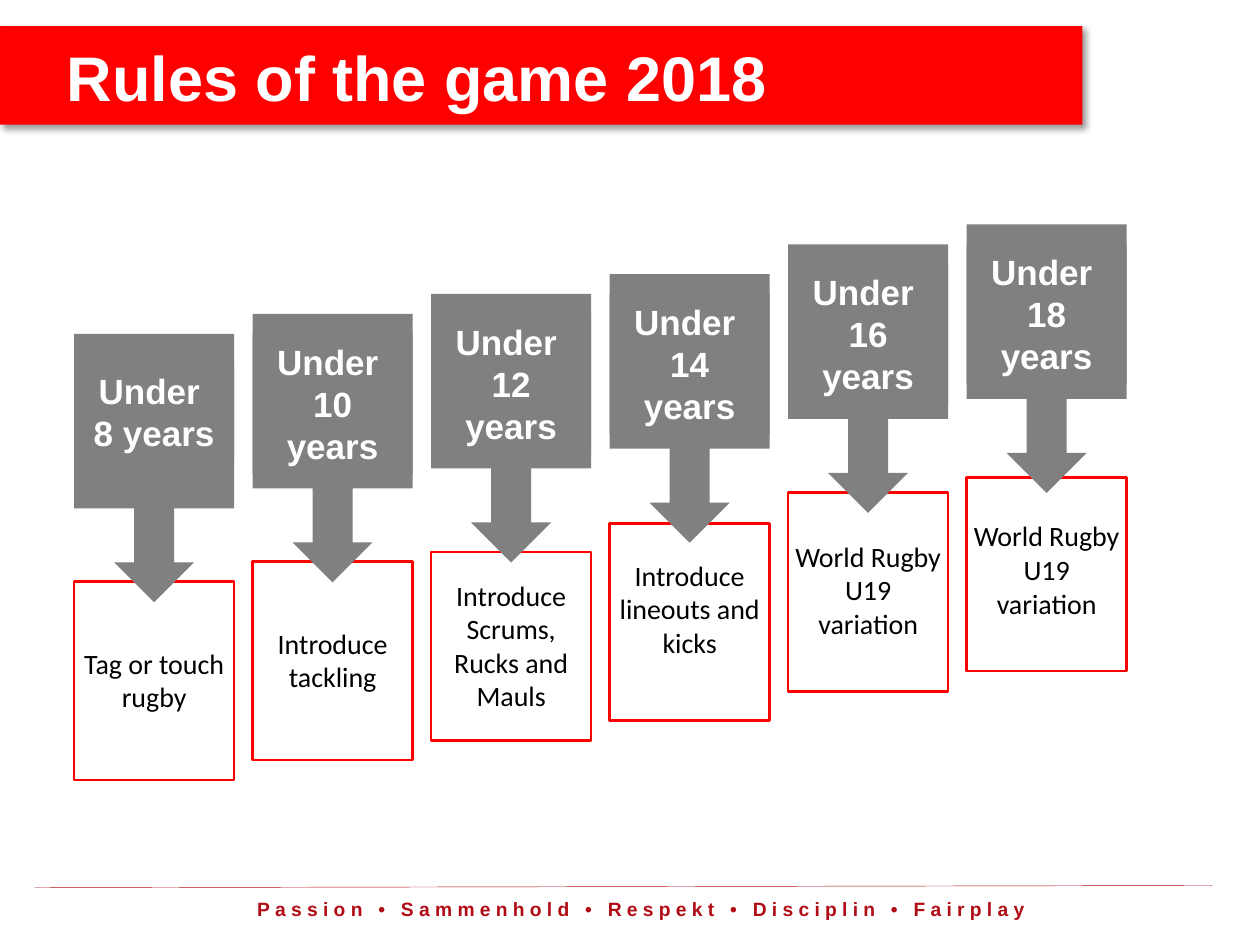
from dataclasses import dataclass

from lxml.etree import SubElement
from pptx import Presentation
from pptx.dml.color import RGBColor
from pptx.enum.shapes import MSO_CONNECTOR, MSO_SHAPE
from pptx.enum.text import MSO_ANCHOR, PP_ALIGN
from pptx.oxml import parse_xml
from pptx.oxml.ns import qn
from pptx.util import Pt

SHADE = (
    '<a:effectLst xmlns:a="http://schemas.openxmlformats.org/drawingml/2006/main">'
    '<a:outerShdw blurRad="50800" dist="38100" dir="2700000" algn="tl" rotWithShape="0">'
    '<a:srgbClr val="000000"><a:alpha val="40000"/></a:srgbClr>'
    '</a:outerShdw></a:effectLst>'
)


@dataclass(frozen=True)
class Theme:
    """Colours, fonts and type sizes of the slide."""
    red: str = "FF0000"
    wine: str = "B10C15"
    grey: str = "808080"
    white: str = "FFFFFF"
    black: str = "000000"
    head: str = "Arial"
    body: str = "Calibri"
    title: int = 36
    label: int = 20
    note: int = 16
    foot: int = 11


class Deck:
    """Draws each kind of element on the current slide."""

    def __init__(self, theme, slide):
        """Keep the style and the slide."""
        self.theme = theme
        self.slide = slide

    def letter(self, frame, text, size, face, tint, bold=True, align=PP_ALIGN.CENTER):
        """Fill a text frame and format its runs."""
        frame.word_wrap = True
        frame.text = text
        for line in frame.paragraphs:
            line.alignment = align
            for run in line.runs:
                run.font.size = Pt(size)
                run.font.name = face
                run.font.bold = bold
                run.font.color.rgb = RGBColor.from_string(tint)

    def block(self, kind, place, fill=None, line=None, home=None):
        """Add a preset shape to the slide or to a group."""
        shape = (home or self.slide).shapes.add_shape(kind, *map(Pt, place))
        shape.shadow.inherit = False
        if fill:
            shape.fill.solid()
            shape.fill.fore_color.rgb = RGBColor.from_string(fill)
        else:
            shape.fill.background()
        if line:
            shape.line.color.rgb = RGBColor.from_string(line)
            shape.line.width = Pt(1.5)
        else:
            shape.line.fill.background()
        return shape

    def banner(self, place):
        """Add the red title bar with its soft shadow."""
        bar = self.block(MSO_SHAPE.RECTANGLE, place, self.theme.red)
        props = bar.element.spPr
        props.replace(props.find(qn("a:effectLst")), parse_xml(SHADE))

    def title(self, text, place):
        """Place the title in front of the shapes drawn so far."""
        title = self.slide.shapes.title
        title.left, title.top, title.width, title.height = map(Pt, place)
        title.element.getparent().append(title.element)
        theme = self.theme
        title.text_frame.vertical_anchor = MSO_ANCHOR.MIDDLE
        self.letter(title.text_frame, text, theme.title, theme.head, theme.white,
                    align=PP_ALIGN.LEFT)

    def foot(self, text, place):
        """Add the spaced motto line."""
        theme = self.theme
        box = self.slide.shapes.add_textbox(*map(Pt, place))
        self.letter(box.text_frame, text, theme.foot, theme.head, theme.wine)
        for props in box.element.iter(qn("a:rPr")):
            props.set("spc", "300")

    def rule(self, ends):
        """Add the thin line above the motto."""
        line = self.slide.shapes.add_connector(MSO_CONNECTOR.STRAIGHT, *map(Pt, ends))
        line.line.color.rgb = RGBColor.from_string(self.theme.wine)
        line.line.width = Pt(0.25)
        SubElement(line.element.spPr, qn("a:effectLst"))

    def arrow(self, text, left, top, width, drop, tall):
        """Add a grouped arrow callout with its label."""
        theme = self.theme
        group = self.slide.shapes.add_group_shape()
        self.block(MSO_SHAPE.DOWN_ARROW_CALLOUT, (left, top, width, 153.4),
                   theme.grey, home=group)
        label = self.block(MSO_SHAPE.RECTANGLE, (left, top + drop, width, tall),
                           theme.grey, home=group)
        label.text_frame.vertical_anchor = MSO_ANCHOR.TOP
        self.letter(label.text_frame, text, theme.label, theme.head, theme.white)

    def note(self, text, place):
        """Add the text of a step."""
        theme = self.theme
        box = self.slide.shapes.add_textbox(*map(Pt, place))
        self.letter(box.text_frame, text, theme.note, theme.body, theme.black, False)


def main():
    """Build and save the slide."""
    show = Presentation()
    show.slide_width, show.slide_height = Pt(720), Pt(540)
    theme = Theme()
    deck = Deck(theme, show.slides.add_slide(show.slide_layouts[5]))

    wide, start, pitch = 91.4, 42.4, 102
    last = "World Rugby\nU19\nvariation"
    steps = [
        (8, 190.8, 332.4, 113.4, 365.8, 46, "Tag or touch rugby"),
        (10, 179.4, 321, 113.4, 354.2, 46, "Introduce tackling"),
        (12, 168, 315.4, 107.8, 326.9, 85, "Introduce\nScrums, Rucks and Mauls"),
        (14, 156.7, 299, 112.8, 315.4, 65.5, "Introduce lineouts and kicks"),
        (16, 139.7, 281.4, 113.8, 304.6, 65.5, last),
        (18, 128.3, 272.9, 110.5, 293, 65.5, last),
    ]
    lefts = [start + pitch * i for i in range(len(steps))]

    deck.foot("Passion • Sammenhold • Respekt • Disciplin • Fairplay",
              (121, 509, 491, 33.8))
    deck.rule((19.7, 507.3, 692.6, 506))
    deck.banner((0, 15, 618.5, 56.2))
    for left, (_, _, top, tall, *_) in zip(lefts, steps):
        deck.block(MSO_SHAPE.RECTANGLE, (left, top, wide, tall), line=theme.red)
    deck.title("Rules of the game 2018", (31, 15.8, 587.5, 56.2))
    for left, (age, top, *_) in zip(lefts, steps):
        drop, tall = (16.6, 55.4) if age < 10 else (11.4, 80)
        deck.arrow(f"Under \n{age} years", left, top, wide, drop, tall)
    for left, (*_, top, tall, text) in zip(lefts, steps):
        deck.note(text, (left - 5, top, wide + 10, tall))

    show.save("out.pptx")


if __name__ == "__main__":
    main()
